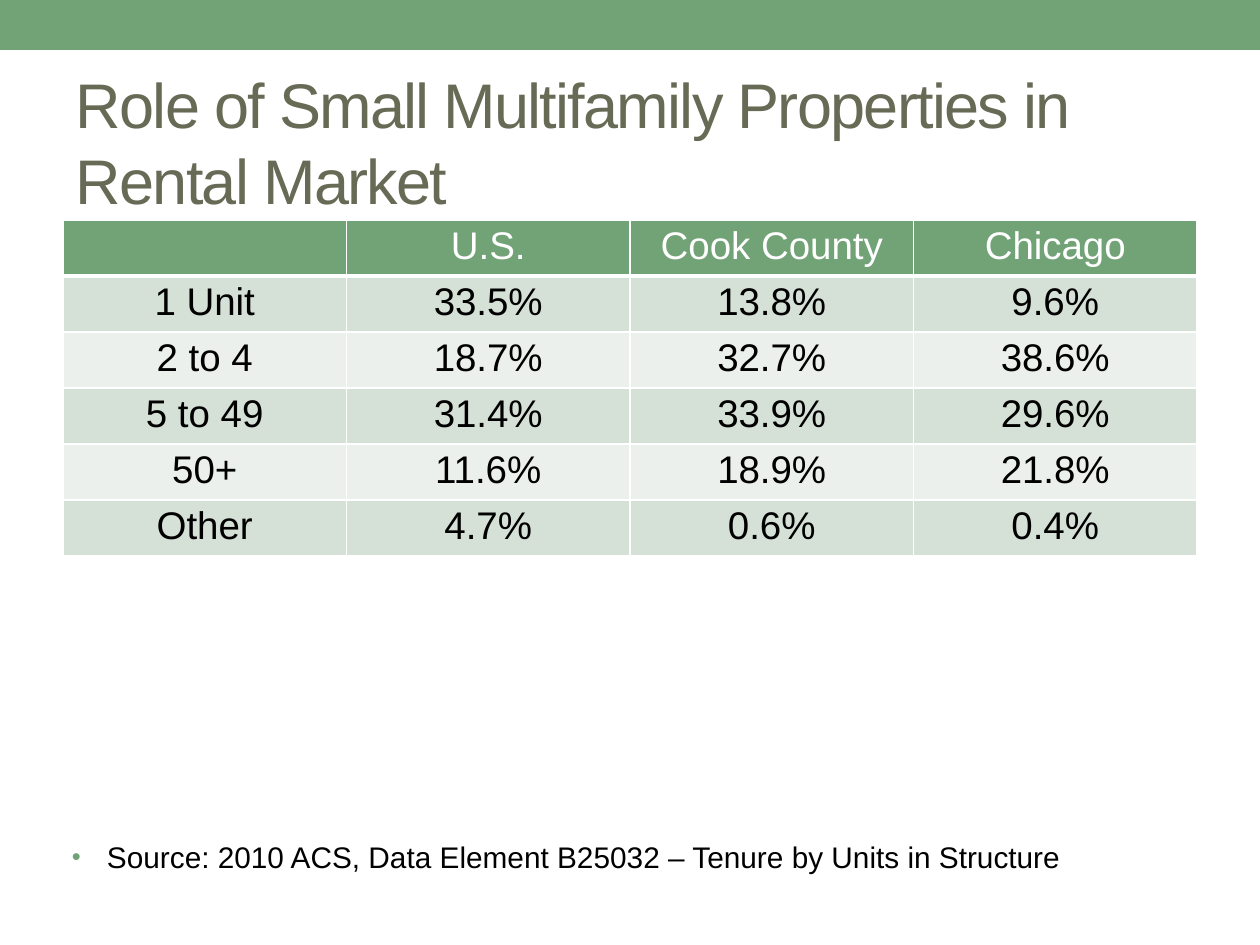
from lxml import etree
from pptx import Presentation
from pptx.dml.color import RGBColor
from pptx.enum.shapes import MSO_SHAPE
from pptx.enum.text import MSO_ANCHOR, MSO_AUTO_SIZE, PP_ALIGN
from pptx.oxml.ns import qn
from pptx.util import Emu, Pt

RECTANGLE = MSO_SHAPE.RECTANGLE
MIDDLE = MSO_ANCHOR.MIDDLE
NO_AUTOFIT = MSO_AUTO_SIZE.NONE
LEFT, CENTER = PP_ALIGN.LEFT, PP_ALIGN.CENTER
TITLE_ONLY = 5
PX_PER_INCH = 126
FONT = "Arial"
COLORS = {
    "green": "72A376",
    "olive": "676A55",
    "band_dark": "D5E0D6",
    "band_light": "EBF0EC",
    "white": "FFFFFF",
    "black": "000000",
}
UNIT_SHARES = [
    ["", "U.S.", "Cook County", "Chicago"],
    ["1 Unit", "33.5%", "13.8%", "9.6%"],
    ["2 to 4", "18.7%", "32.7%", "38.6%"],
    ["5 to 49", "31.4%", "33.9%", "29.6%"],
    ["50+", "11.6%", "18.9%", "21.8%"],
    ["Other", "4.7%", "0.6%", "0.4%"],
]


def px(length):
    return Emu(round(length * 914400 / PX_PER_INCH))


def rgb(color):
    return RGBColor.from_string(COLORS[color])


def apply_format(target, values):
    for name, value in values.items():
        setattr(target, name, value)


def margins(side, edge):
    return {
        "margin_left": px(side),
        "margin_right": px(side),
        "margin_top": px(edge),
        "margin_bottom": px(edge),
    }


def write_text(frame, text, size, color, align):
    paragraph = frame.paragraphs[0]
    paragraph.alignment = align
    if text:
        run = paragraph.add_run()
        run.text = text
        apply_format(run.font, {"name": FONT, "size": Pt(size), "bold": False})
        run.font.color.rgb = rgb(color)
    return paragraph


def add_top_band(slide):
    band = slide.shapes.add_shape(RECTANGLE, 0, 0, px(1260), px(50))
    band.shadow.inherit = False
    band.fill.solid()
    band.fill.fore_color.rgb = rgb("green")
    band.line.fill.background()


def format_title(slide, text):
    title = slide.shapes.title
    apply_format(title, {"left": px(63), "top": px(73), "width": px(1134), "height": px(136)})
    frame = title.text_frame
    apply_format(frame, {
        "word_wrap": True,
        "auto_size": NO_AUTOFIT,
        "vertical_anchor": MIDDLE,
        **margins(13, 6),
    })
    heading = write_text(frame, text, 36, "olive", LEFT)
    heading.runs[0].font._element.set("spc", "-100")


def set_borders(cell, widths):
    properties = cell._tc.get_or_add_tcPr()
    for side, width in widths.items():
        border = etree.SubElement(properties, qn(f"a:ln{side}"), w=str(Pt(width)))
        fill = etree.SubElement(border, qn("a:solidFill"))
        etree.SubElement(fill, qn("a:srgbClr"), val=COLORS["white"])


def format_cell(cell, text, fill, text_color, bottom_width):
    apply_format(cell, margins(9, 5))
    set_borders(cell, {"L": 1, "R": 1, "T": 1, "B": bottom_width})
    cell.fill.solid()
    cell.fill.fore_color.rgb = rgb(fill)
    write_text(cell.text_frame, text, 22, text_color, CENTER)


def add_share_table(slide, rows):
    row_height = px(56)
    table = slide.shapes.add_table(
        len(rows), len(rows[0]), px(63), px(220), px(1134), row_height * len(rows)
    ).table
    for row_index, values in enumerate(rows):
        table.rows[row_index].height = row_height
        if row_index == 0:
            style = ("green", "white", 3)
        else:
            style = ("band_dark" if row_index % 2 else "band_light", "black", 1)
        for column_index, value in enumerate(values):
            format_cell(table.cell(row_index, column_index), value, *style)


def add_bullet(paragraph, indent):
    properties = paragraph._p.get_or_add_pPr()
    properties.set("marL", str(indent))
    properties.set("indent", str(-indent))
    space_before = etree.SubElement(properties, qn("a:spcBef"))
    etree.SubElement(space_before, qn("a:spcPct"), val="20000")
    bullet_color = etree.SubElement(properties, qn("a:buClr"))
    etree.SubElement(bullet_color, qn("a:srgbClr"), val=COLORS["green"])
    etree.SubElement(properties, qn("a:buSzPct"), val="85000")
    etree.SubElement(properties, qn("a:buFont"), typeface=FONT)
    etree.SubElement(properties, qn("a:buChar"), char="•")


def add_source_note(slide, text):
    note = slide.shapes.add_textbox(px(63), px(834), px(1197), px(53))
    frame = note.text_frame
    apply_format(frame, {"word_wrap": True, **margins(9, 5)})
    add_bullet(write_text(frame, text, 17, "black", LEFT), px(35))


def main():
    presentation = Presentation()
    apply_format(presentation, {"slide_width": px(1260), "slide_height": px(945)})
    slide = presentation.slides.add_slide(presentation.slide_layouts[TITLE_ONLY])
    add_top_band(slide)
    format_title(slide, "Role of Small Multifamily Properties in Rental Market")
    add_share_table(slide, UNIT_SHARES)
    add_source_note(slide, "Source: 2010 ACS, Data Element B25032 – Tenure by Units in Structure")
    presentation.save("out.pptx")


if __name__ == "__main__":
    main()
